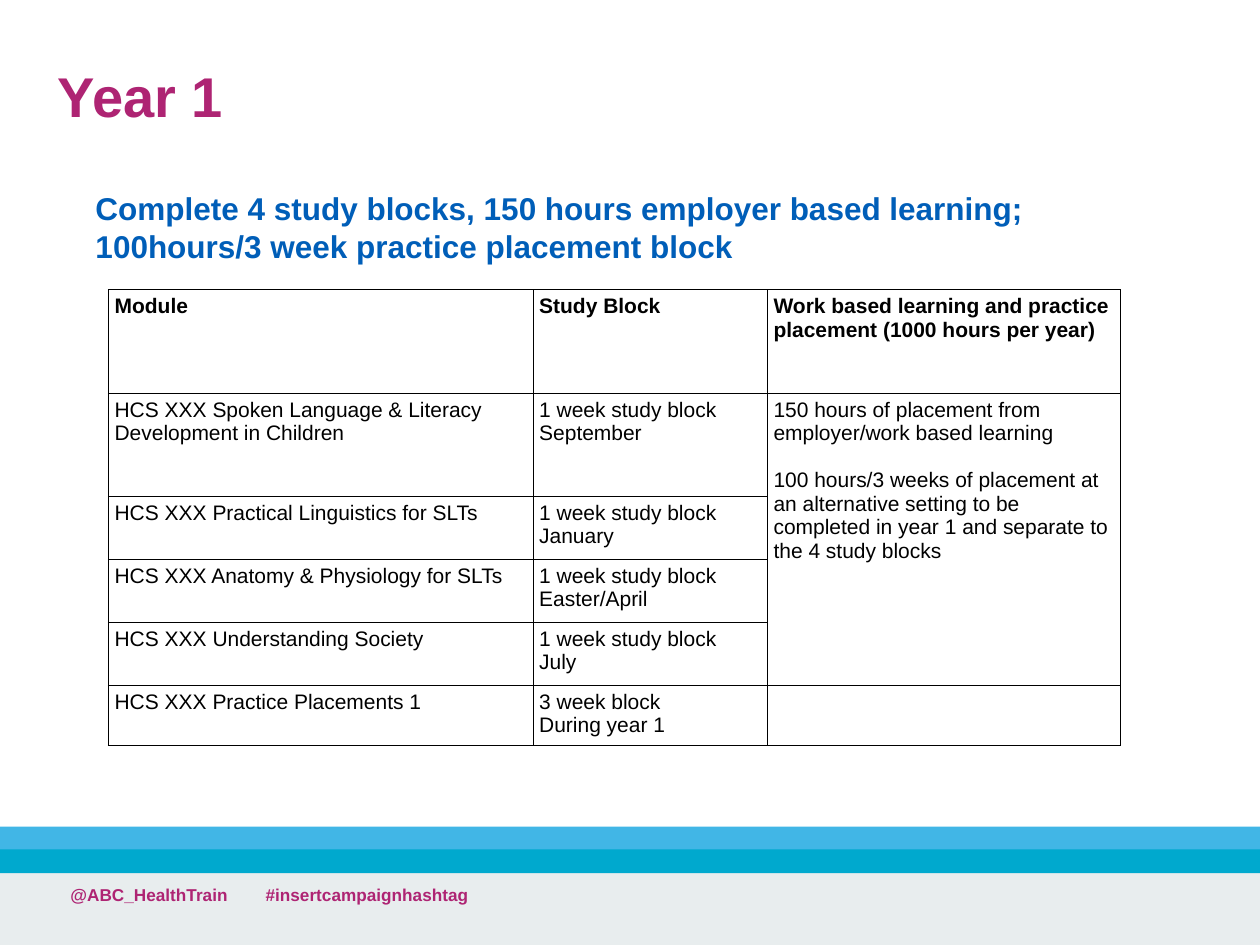
from dataclasses import dataclass

from lxml import etree
from pptx import Presentation
from pptx.dml.color import RGBColor
from pptx.enum.shapes import MSO_SHAPE
from pptx.enum.text import MSO_ANCHOR
from pptx.oxml.ns import qn
from pptx.util import Inches, Pt

RECTANGLE = MSO_SHAPE.RECTANGLE
TOP, MIDDLE = MSO_ANCHOR.TOP, MSO_ANCHOR.MIDDLE


@dataclass(frozen=True)
class Theme:
    font: str = "Arial"
    magenta: str = "AE2473"
    blue: str = "005EB8"
    black: str = "000000"
    grey: str = "E8EDEE"
    sky: str = "41B6E6"
    teal: str = "00A9CE"
    title_size: float = 32
    lead_size: float = 18
    table_size: float = 12
    footer_size: float = 9.8
    border_width: float = 0.5


THEME = Theme()

# Left, top, width, height and colour of each footer band
BANDS = [
    (0, 6.93, 10, 0.57, THEME.grey),
    (0, 6.56, 10, 0.19, THEME.sky),
    (0, 6.74, 10, 0.19, THEME.teal),
]

COLUMN_WIDTHS = [3.37, 1.86, 2.8]
ROW_HEIGHTS = [0.82, 0.82, 0.5, 0.5, 0.5, 0.45]
HEADINGS = [
    "Module",
    "Study Block",
    "Work based learning and practice placement (1000 hours per year)",
]
MODULES = [
    ("HCS XXX Spoken Language & Literacy Development in Children",
     "1 week study block", "September"),
    ("HCS XXX Practical Linguistics for SLTs", "1 week study block", "January"),
    ("HCS XXX Anatomy & Physiology for SLTs", "1 week study block", "Easter/April"),
    ("HCS XXX Understanding Society", "1 week study block", "July"),
    ("HCS XXX Practice Placements 1", "3 week block", "During year 1"),
]
PLACEMENT = [
    "150 hours of placement from employer/work based learning",
    "100 hours/3 weeks of placement at an alternative setting to be "
    "completed in year 1 and separate to the 4 study blocks",
]


def apply_format(target, values):
    for name, value in values.items():
        setattr(target, name, value)


def write_text(frame, lines, size, color, bold=False, **para_format):
    """Write one paragraph per line, all in the same type."""
    for index, line in enumerate(lines):
        para = frame.paragraphs[0] if index == 0 else frame.add_paragraph()
        apply_format(para, para_format)
        span = para.add_run()
        span.text = line
        apply_format(span.font, {"name": THEME.font, "size": Pt(size), "bold": bold})
        span.font.color.rgb = RGBColor.from_string(color)


def add_band(page, left, top, width, height, color):
    band = page.shapes.add_shape(
        RECTANGLE, Inches(left), Inches(top), Inches(width), Inches(height))
    band.shadow.inherit = False
    band.fill.solid()
    band.fill.fore_color.rgb = RGBColor.from_string(color)
    band.line.fill.background()


def add_text(page, left, top, width, height, line, size, color,
             anchor=TOP, **para_format):
    box = page.shapes.add_textbox(
        Inches(left), Inches(top), Inches(width), Inches(height))
    apply_format(box.text_frame, {"word_wrap": True, "vertical_anchor": anchor})
    write_text(box.text_frame, [line], size, color, bold=True, **para_format)
    return box


def add_tab_stop(para, position):
    tabs = etree.SubElement(para._p.get_or_add_pPr(), qn("a:tabLst"))
    etree.SubElement(tabs, qn("a:tab"), pos=str(Inches(position)), algn="l")


def style_cell(cell):
    apply_format(cell, {
        "margin_left": Inches(0.05), "margin_right": Inches(0.05),
        "margin_top": Inches(0.04), "margin_bottom": Inches(0.04),
    })
    properties = cell._tc.get_or_add_tcPr()
    for side in ("lnL", "lnR", "lnT", "lnB"):
        border = etree.SubElement(
            properties, qn(f"a:{side}"), w=str(Pt(THEME.border_width)))
        fill = etree.SubElement(border, qn("a:solidFill"))
        etree.SubElement(fill, qn("a:srgbClr"), val=THEME.black)
    cell.fill.background()


def add_module_table(page, left, top):
    table = page.shapes.add_table(
        len(ROW_HEIGHTS), len(COLUMN_WIDTHS), Inches(left), Inches(top),
        Inches(sum(COLUMN_WIDTHS)), Inches(sum(ROW_HEIGHTS))).table
    apply_format(table, {"first_row": False, "horz_banding": False})
    for column, width in zip(table.columns, COLUMN_WIDTHS):
        column.width = Inches(width)
    for row, height in zip(table.rows, ROW_HEIGHTS):
        row.height = Inches(height)
    for cell in table.iter_cells():
        style_cell(cell)

    def fill_cell(row, column, lines, **text_format):
        write_text(table.cell(row, column).text_frame, lines,
                   THEME.table_size, THEME.black, **text_format)

    for column, heading in enumerate(HEADINGS):
        fill_cell(0, column, [heading], bold=True)
    for row, (module, *study_block) in enumerate(MODULES, start=1):
        fill_cell(row, 0, [module])
        fill_cell(row, 1, study_block)

    # One placement note spans the four study blocks
    table.cell(1, 2).merge(table.cell(4, 2))
    fill_cell(1, 2, PLACEMENT, space_after=Pt(13.5))


def main():
    deck = Presentation()
    apply_format(deck, {"slide_width": Inches(10), "slide_height": Inches(7.5)})
    page = deck.slides.add_slide(deck.slide_layouts[6])

    # Footer
    for band in BANDS:
        add_band(page, *band)
    footer = add_text(page, 0.46, 6.97, 5.84, 0.53,
                      "@ABC_HealthTrain\t#insertcampaignhashtag",
                      THEME.footer_size, THEME.magenta)
    add_tab_stop(footer.text_frame.paragraphs[0], 1.55)

    # Title, table and lead text
    add_text(page, 0.36, 0.32, 8.62, 0.94, "Year 1", THEME.title_size,
             THEME.magenta, anchor=MIDDLE, line_spacing=0.9)
    add_module_table(page, 0.86, 2.3)
    add_text(page, 0.66, 1.45, 8.33, 0.71,
             "Complete 4 study blocks, 150 hours employer based learning; "
             "100hours/3 week practice placement block",
             THEME.lead_size, THEME.blue)

    deck.save("out.pptx")


if __name__ == "__main__":
    main()
